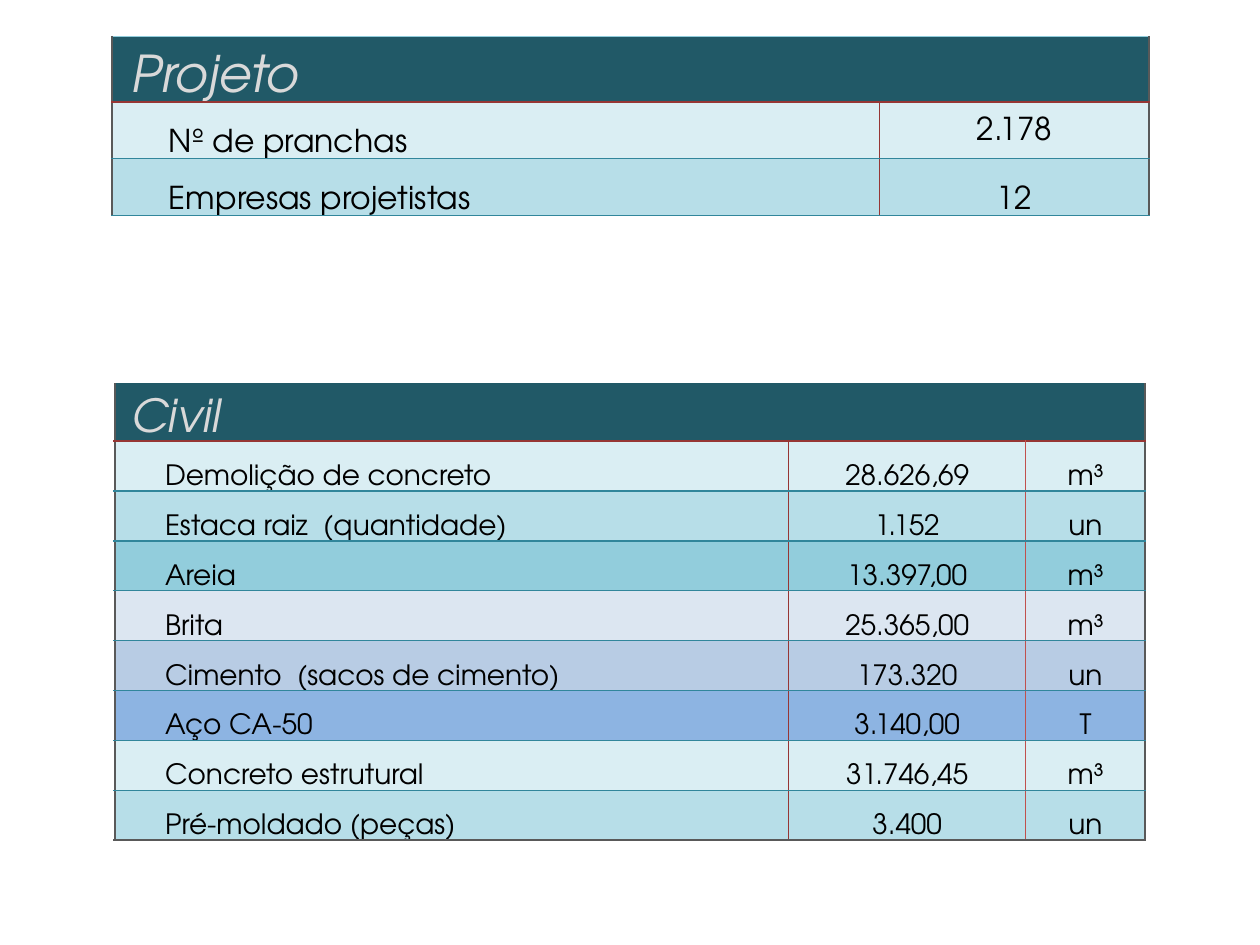
"""Build a slide with the project and civil works quantity tables."""
from lxml.etree import SubElement
from pptx import Presentation
from pptx.dml.color import RGBColor
from pptx.enum.text import MSO_ANCHOR, PP_ALIGN
from pptx.oxml.ns import qn
from pptx.util import Inches, Pt

FONT = "TeX Gyre Adventor"
COLORS = {
    "header": "215967", "header_text": "D9D9D9", "text": "000000",
    "frame": "595959", "teal": "31869B", "sky": "92CDDC",
    "wine": "963634", "red": "C0504D",
    "ice": "DAEEF3", "aqua": "B7DEE8", "mist": "DCE6F1",
    "steel": "B8CCE4", "blue": "8DB4E2",
}
FRAME = ("frame", 1.5)
RULE = ("teal", 1)
HEADER_RULE = ("wine", 1.5)
WINE_DIVIDER = ("wine", 0.5)
RED_DIVIDER = ("red", 0.5)


def set_borders(cell, edges):
    properties = cell._tc.get_or_add_tcPr()
    for side, edge in zip("LRTB", edges):
        line = SubElement(properties, qn(f"a:ln{side}"))
        if edge is None:
            SubElement(line, qn("a:noFill"))
            continue
        color, width = edge
        line.set("w", str(Pt(width)))
        fill = SubElement(line, qn("a:solidFill"))
        SubElement(fill, qn("a:srgbClr")).set("val", COLORS[color])


def write_cell(cell, text, size, color, italic, align):
    para = cell.text_frame.paragraphs[0]
    para.alignment = align
    span = para.add_run()
    span.text = text
    span.font.name = FONT
    span.font.size = Pt(size)
    span.font.italic = italic
    span.font.color.rgb = RGBColor.from_string(COLORS[color])


tables = [
    {
        "title": "Projeto", "place": (0.89, 0.29, 8.23, 1.42),
        "columns": [6.09, 2.14], "header_height": 0.52,
        "sizes": (29, 18), "margin": 0.02, "indents": (0.15, 0.45),
        "verticals": [FRAME, WINE_DIVIDER, FRAME], "top": ("sky", 1), "bottom": RULE,
        "rows": [
            ("ice", "Nº de pranchas", "2.178"),
            ("aqua", "Empresas projetistas", "12"),
        ],
    },
    {
        "title": "Civil", "place": (0.91, 3.04, 8.18, 3.63),
        "columns": [5.35, 1.88, 0.95], "header_height": 0.46,
        "sizes": (26, 16), "margin": 0.01, "indents": (0.13, 0.4),
        "verticals": [FRAME, WINE_DIVIDER, RED_DIVIDER, FRAME], "top": None, "bottom": FRAME,
        "rows": [
            ("ice", "Demolição de concreto", "28.626,69", "m³"),
            ("aqua", "Estaca raiz  (quantidade)", "1.152", "un"),
            ("sky", "Areia", "13.397,00", "m³"),
            ("mist", "Brita", "25.365,00", "m³"),
            ("steel", "Cimento  (sacos de cimento)", "173.320", "un"),
            ("blue", "Aço CA-50", "3.140,00", "T"),
            ("ice", "Concreto estrutural", "31.746,45", "m³"),
            ("aqua", "Pré-moldado (peças)", "3.400", "un"),
        ],
    },
]

deck = Presentation()
deck.slide_width = Inches(10)
deck.slide_height = Inches(7.5)
page = deck.slides.add_slide(deck.slide_layouts[6])

for data in tables:
    columns, rows = data["columns"], data["rows"]
    last_column = len(columns) - 1
    place = [Inches(length) for length in data["place"]]
    table = page.shapes.add_table(len(rows) + 1, len(columns), *place).table
    for column, width in zip(table.columns, columns):
        column.width = Inches(width)
    row_height = (data["place"][3] - data["header_height"]) / len(rows)
    for row in table.rows:
        row.height = Inches(row_height)
    table.rows[0].height = Inches(data["header_height"])
    table.cell(0, 0).merge(table.cell(0, last_column))

    horizontals = [data["top"], HEADER_RULE] + [RULE] * (len(rows) - 1) + [data["bottom"]]
    fills = ["header"] + [row[0] for row in rows]
    for r, fill in enumerate(fills):
        for c in range(len(columns)):
            cell = table.cell(r, c)
            left, right = data["verticals"][c:c + 2]
            if r == 0:
                left, right = (FRAME if c == 0 else None), FRAME
            set_borders(cell, (left, right, horizontals[r], horizontals[r + 1]))
            cell.fill.solid()
            cell.fill.fore_color.rgb = RGBColor.from_string(COLORS[fill])
            cell.vertical_anchor = MSO_ANCHOR.BOTTOM
            indent = data["indents"][min(r, 1)] if c == 0 else data["margin"]
            cell.margin_left = Inches(indent)
            cell.margin_right = cell.margin_top = Inches(data["margin"])
            cell.margin_bottom = 0
            if r > 0:
                align = PP_ALIGN.LEFT if c == 0 else PP_ALIGN.CENTER
                write_cell(cell, rows[r - 1][c + 1], data["sizes"][1], "text", False, align)
    write_cell(table.cell(0, 0), data["title"], data["sizes"][0], "header_text", True, PP_ALIGN.LEFT)
    if data["title"] == "Projeto":
        table.cell(1, 1).vertical_anchor = MSO_ANCHOR.MIDDLE

deck.save("out.pptx")
